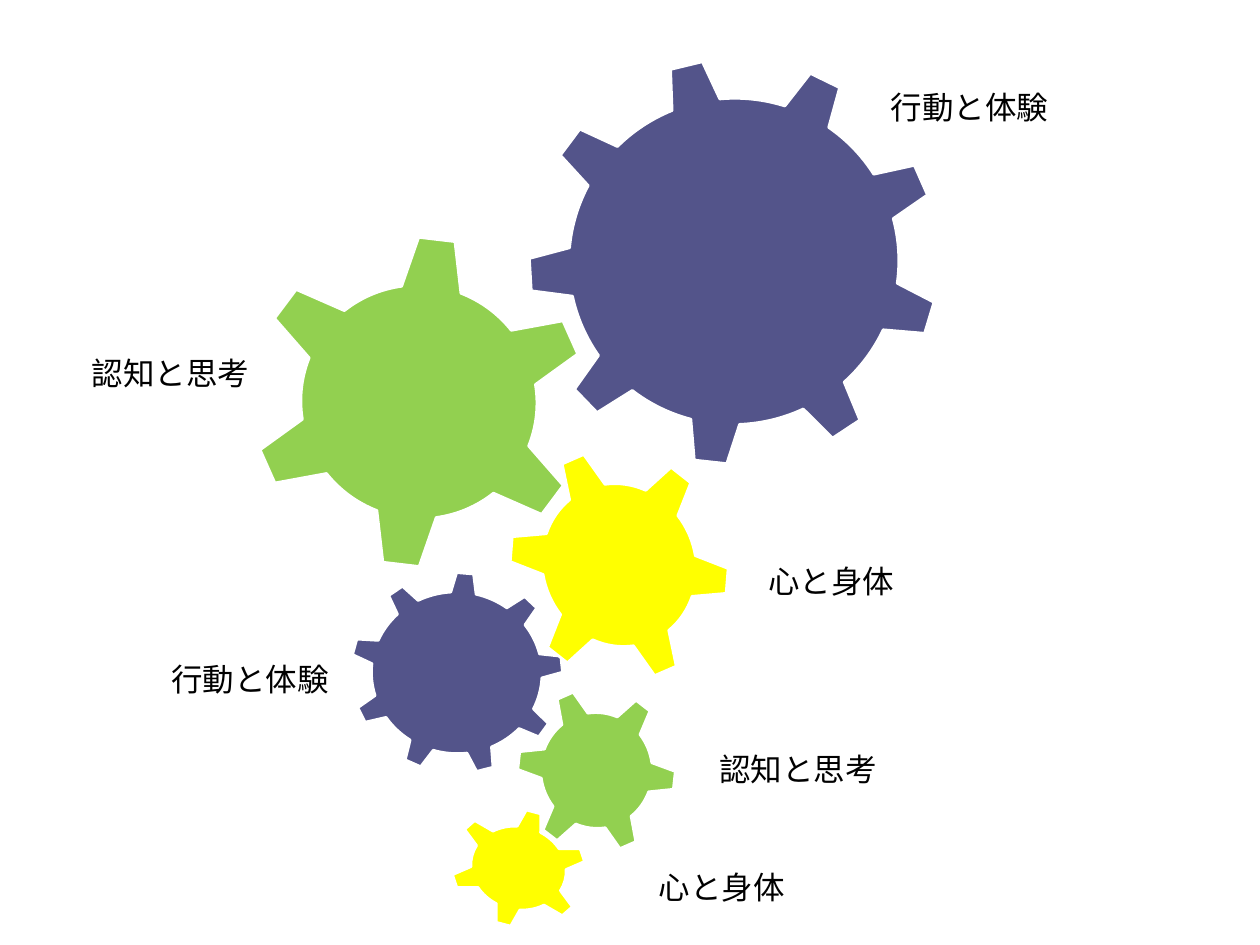
from math import atan2, cos, hypot, pi, radians, sin, tan

from lxml import etree
from pptx import Presentation
from pptx import util as u
from pptx.dml.color import RGBColor
from pptx.enum import text
from pptx.oxml.ns import qn

INDIGO = RGBColor(0x53, 0x54, 0x8A)
GREEN = RGBColor(0x92, 0xD0, 0x50)
YELLOW = RGBColor(0xFF, 0xFF, 0x00)
WHITE = RGBColor(0xFF, 0xFF, 0xFF)
BLACK = RGBColor(0, 0, 0)
FONT = "TeX Gyre Schola"

deck = Presentation()
deck.slide_width, deck.slide_height = u.Inches(10), u.Inches(7.5)
page = deck.slides.add_slide(deck.slide_layouts[6])
CELL = deck.slide_width // 10  # the page is a grid of 10 columns by 7.5 rows

# Tooth profile by tooth count, as shares of the gear radius:
# tip half-width, root distance, root half-width
PROFILES = {6: (0.11, 0.69, 0.18), 9: (0.08, 0.8, 0.12)}


def gear_outline(teeth, phase):
    """Corners of a gear of radius 1, and the curve handles between its teeth."""
    tip, root, base = PROFILES[teeth]
    rim, half_angle = hypot(root, base), atan2(base, root)
    pitch = 2 * pi / teeth
    sweep = pitch - 2 * half_angle
    reach = 4 / 3 * tan(sweep / 4)
    corners, handles = [], []
    for tooth in range(teeth):
        angle = tooth * pitch - pi / 2 + radians(phase)
        for out, side in ((root, -base), (1, -tip), (1, tip), (root, base)):
            corners.append((out * cos(angle) - side * sin(angle),
                            out * sin(angle) + side * cos(angle)))
        for turn, pull in ((angle + half_angle, reach),
                           (angle + half_angle + sweep, -reach)):
            handles.append((rim * (cos(turn) - pull * sin(turn)),
                            rim * (sin(turn) + pull * cos(turn))))
    return corners, handles


# Gears: left, top, width, height, teeth, turn, first tooth angle, share of box, colour
GEARS = [
    (2.78, 4.54, 1.69, 1.6, 9, 4.8, 0, 0.99, INDIGO),
    (3.57, 6.42, 1.09, 0.94, 6, 15, 0, 0.98, YELLOW),
    (3.95, 5.3, 1.57, 1.63, 6, 351.7, -15, 0.79, GREEN),
    (4.05, 3.55, 1.73, 1.87, 6, 336.4, 0, 0.98, YELLOW),
    (1.66, 1.55, 3.33, 3.28, 6, 21.5, -15, 0.79, GREEN),
    (4.19, 0.46, 3.27, 3.23, 9, 346.4, 0, 0.99, INDIGO),
]
for *bounds, teeth, turn, phase, share, colour in GEARS:
    left, top, width, height = (round(CELL * n) for n in bounds)
    corners, handles = ([(round(width * (1 + share * x) / 2),
                          round(height * (1 + share * y) / 2)) for x, y in group]
                        for group in gear_outline(teeth, phase))
    builder = page.shapes.build_freeform(*corners[0])
    builder.add_line_segments(corners[1:] + corners[:1], close=True)
    gear = builder.convert_to_shape()

    # Let the outline sit inside its full box, with curves between the teeth
    outline = next(gear.element.iter(qn("a:path")))
    outline.set("w", str(width))
    outline.set("h", str(height))
    for number, step in enumerate(list(outline)[:len(corners) + 1]):
        ends = [corners[number % len(corners)]]
        if number and number % 4 == 0:
            step.getparent().replace(step, curve := etree.Element(qn("a:cubicBezTo")))
            step, tooth = curve, number // 4 - 1
            ends = handles[2 * tooth:2 * tooth + 2] + ends
        for old in list(step):
            step.remove(old)
        for x, y in ends:
            etree.SubElement(step, qn("a:pt"), x=str(x), y=str(y))

    gear.left, gear.top, gear.width, gear.height = left, top, width, height
    gear.rotation = turn
    gear.shadow.inherit = False
    gear.fill.solid()
    gear.fill.fore_color.rgb = colour
    gear.line.color.rgb = WHITE
    gear.line.width = u.Pt(1.5)

# Labels: column, row, width, wording
LABELS = [
    (5.13, 6.84, 1.21, "心と身体"),
    (5.61, 5.9, 1.46, "認知と思考"),
    (1.26, 5.19, 1.46, "行動と体験"),
    (6, 4.41, 1.21, "心と身体"),
    (0.63, 2.76, 1.46, "認知と思考"),
    (6.97, 0.65, 1.46, "行動と体験"),
]
for column, row, width, wording in LABELS:
    box = page.shapes.add_textbox(*(round(CELL * n) for n in (column, row, width, 0.4)))
    frame = box.text_frame
    frame.text = wording
    frame.word_wrap = False
    frame.auto_size = text.MSO_AUTO_SIZE.SHAPE_TO_FIT_TEXT
    span = frame.paragraphs[0].runs[0]
    span.font.name = FONT
    span.font.size = u.Pt(18)
    span.font.color.rgb = BLACK

deck.save("out.pptx")
